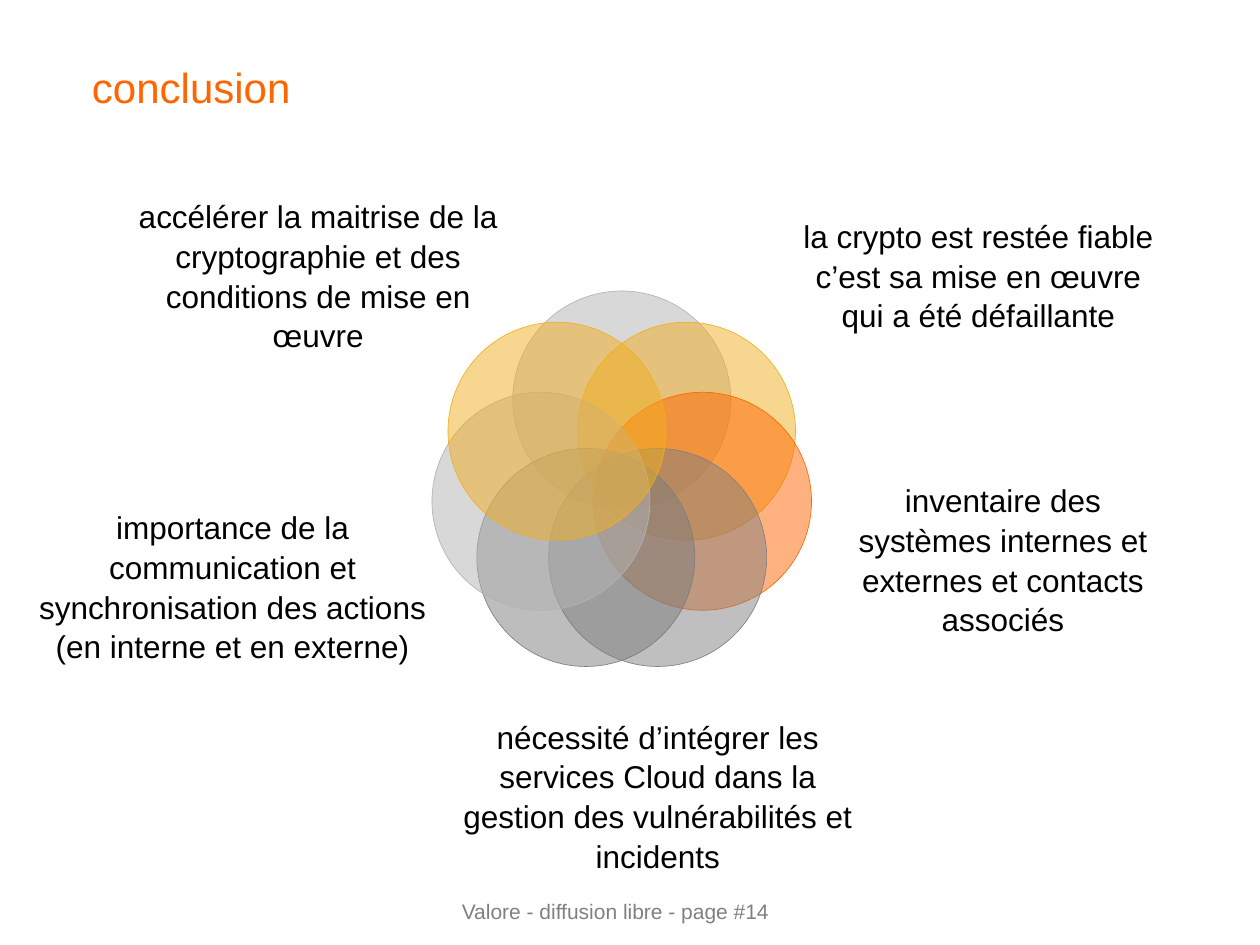
from dataclasses import dataclass
from math import cos, pi, sin

from lxml import etree
from pptx import Presentation
from pptx.dml.color import RGBColor
from pptx.enum.shapes import MSO_SHAPE
from pptx.enum.text import MSO_ANCHOR, PP_ALIGN
from pptx.oxml.ns import qn
from pptx.util import Emu, Pt

OVAL = MSO_SHAPE.OVAL
TOP, MIDDLE = MSO_ANCHOR.TOP, MSO_ANCHOR.MIDDLE
LEFT, CENTER = PP_ALIGN.LEFT, PP_ALIGN.CENTER
EMU_PER_PX = 9144


@dataclass(frozen=True)
class Theme:
    """Colours and type sizes of the slide."""
    font: str = "Arial"
    title_size: int = 24
    label_size: int = 18
    footer_size: int = 12
    orange: str = "FF6600"
    amber: str = "F1AE20"
    silver: str = "B3B3B3"
    grey: str = "808080"
    dark_grey: str = "7D7D7D"
    black: str = "000000"
    outline: float = 0.37
    opacity: int = 50


THEME = Theme()
SLIDE = (1000, 750)
TITLE_BOX = (65, 45, 867, 108)
FOOTER_BOX = (264, 708, 449, 30)
ROSETTE_BOX = (343, 231, 301, 298)
PETAL = 173
PETAL_COLORS = (THEME.silver, THEME.amber, THEME.orange, THEME.grey,
                THEME.dark_grey, THEME.silver, THEME.amber)
LABELS = (
    ((633, 155, 287, 126),
     "la crypto est restée fiable c’est sa mise en œuvre qui a été défaillante"),
    ((674, 381, 244, 125),
     "inventaire des systèmes internes et externes et contacts associés"),
    ((363, 564, 318, 134),
     "nécessité d’intégrer les services Cloud dans la gestion des "
     "vulnérabilités et incidents"),
    ((25, 382, 319, 166),
     "importance de la communication et synchronisation des actions "
     "(en interne et en externe)"),
    ((98, 155, 309, 126),
     "accélérer la maitrise de la cryptographie et des conditions de mise "
     "en œuvre"),
)


def px(length):
    """Turn px into EMU."""
    return Emu(round(length * EMU_PER_PX))


def write(shape, text, size, color, align, anchor, margins, spacing=1.0):
    """Put one formatted paragraph into a shape."""
    frame = shape.text_frame
    frame.word_wrap = True
    frame.vertical_anchor = anchor
    frame.margin_left = frame.margin_right = px(margins[0])
    frame.margin_top = frame.margin_bottom = px(margins[1])
    paragraph = frame.paragraphs[0]
    paragraph.text = text
    paragraph.alignment = align
    paragraph.line_spacing = spacing
    paragraph.font.name = THEME.font
    paragraph.font.size = Pt(size)
    paragraph.font.color.rgb = RGBColor.from_string(color)


def add_title(slide, box, text):
    """Place and fill the title placeholder."""
    title = slide.shapes.title
    title.left, title.top, title.width, title.height = map(px, box)
    write(title, text, THEME.title_size, THEME.orange, LEFT, TOP, (8, 4))


def add_footer(slide, box, text):
    """Add the centred footer line."""
    footer = slide.shapes.add_textbox(*map(px, box))
    write(footer, text, THEME.footer_size, THEME.grey, CENTER, TOP, (10, 5))


def add_petal(slide, left, top, color):
    """Add one translucent circle."""
    petal = slide.shapes.add_shape(OVAL, px(left), px(top), px(PETAL), px(PETAL))
    petal.shadow.inherit = False
    petal.fill.solid()
    petal.fill.fore_color.rgb = RGBColor.from_string(color)
    fill_color = petal.fill._xPr.find(qn("a:solidFill"))[0]
    etree.SubElement(fill_color, qn("a:alpha"), val=str(THEME.opacity * 1000))
    petal.line.color.rgb = RGBColor.from_string(color)
    petal.line.width = Pt(THEME.outline)


def add_rosette(slide, box, colors):
    """Spread overlapping circles evenly around a ring, clockwise from the top."""
    left, top, width, height = box
    step = 2 * pi / len(colors)
    radius = (height - PETAL) / (1 + cos(step / 2))
    for index, color in enumerate(colors):
        angle = index * step
        add_petal(slide, left + (width - PETAL) / 2 + radius * sin(angle),
                  top + radius * (1 - cos(angle)), color)


def add_label(slide, box, text):
    """Add one statement beside the rosette."""
    label = slide.shapes.add_textbox(*map(px, box))
    write(label, text, THEME.label_size, THEME.black, CENTER, MIDDLE, (0, 0), 1.05)


def main():
    """Build and save the conclusion slide."""
    deck = Presentation()
    deck.slide_width, deck.slide_height = map(px, SLIDE)
    slide = deck.slides.add_slide(deck.slide_layouts.get_by_name("Title Only"))
    add_title(slide, TITLE_BOX, "conclusion")
    add_footer(slide, FOOTER_BOX, "Valore - diffusion libre - page #14")
    add_rosette(slide, ROSETTE_BOX, PETAL_COLORS)
    for box, text in LABELS:
        add_label(slide, box, text)
    deck.save("out.pptx")


if __name__ == "__main__":
    main()
